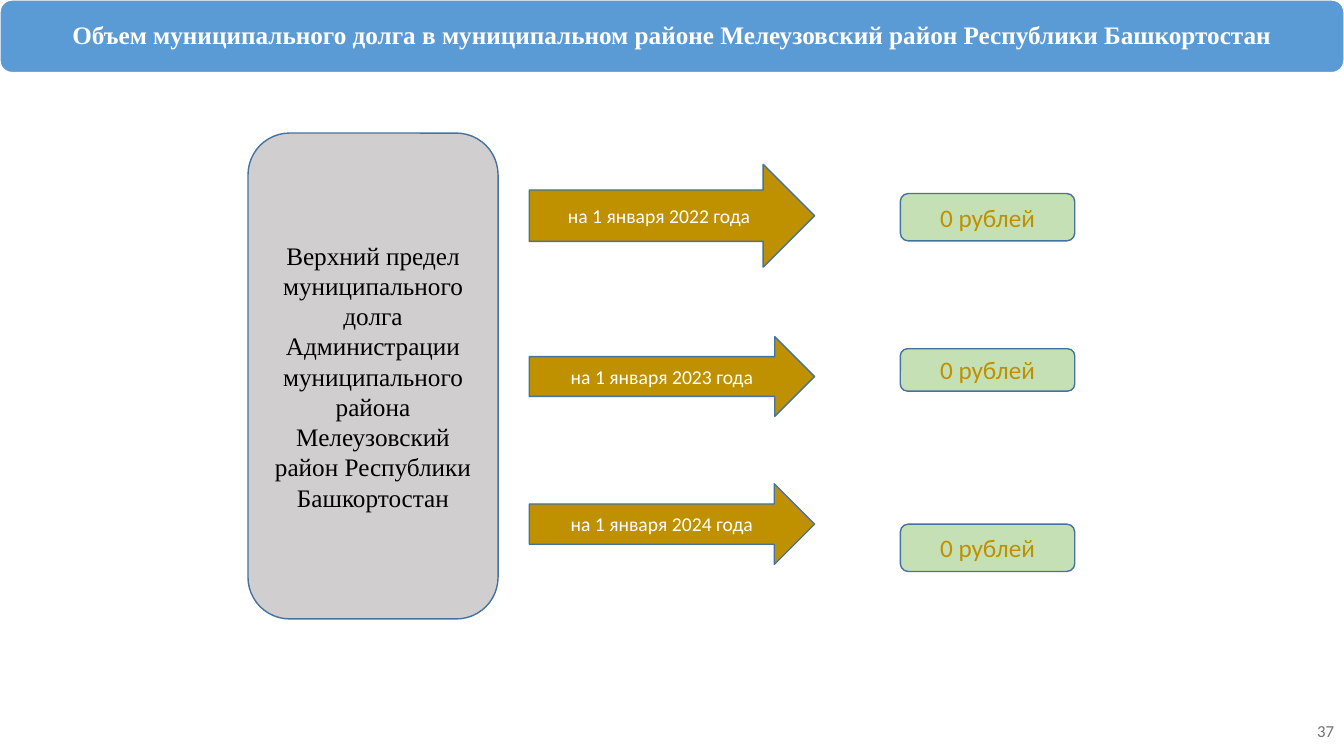
from dataclasses import dataclass

from pptx import Presentation
from pptx.dml.color import RGBColor
from pptx.enum.shapes import MSO_SHAPE as SHAPE
from pptx.enum.text import MSO_ANCHOR as ANCHOR, PP_ALIGN as ALIGN
from pptx.util import Inches, Pt


@dataclass(frozen=True)
class Theme:
    blue: str = "5B9BD5"
    outline: str = "43739E"
    gold: str = "BF9000"
    green: str = "C5E0B4"
    gray: str = "D0CECE"
    muted: str = "767171"
    white: str = "FFFFFF"
    black: str = "000000"
    serif: str = "Times New Roman"
    sans: str = "Calibri"
    large: int = 18
    medium: int = 14
    small: int = 12


THEME = Theme()


def write(sp, text, font=THEME.sans, size=THEME.large, color=THEME.black,
          bold=False, align=ALIGN.CENTER, anchor=ANCHOR.MIDDLE, spacing=None):
    tf = sp.text_frame
    tf.word_wrap = True
    tf.vertical_anchor = anchor
    p = tf.paragraphs[0]
    p.alignment = align
    p.line_spacing = spacing
    r = p.add_run()
    r.text = text
    r.font.name = font
    r.font.size = Pt(size)
    r.font.bold = bold
    r.font.color.rgb = RGBColor.from_string(color)


def add_block(s, kind, left, top, width, height, fill, line=THEME.outline):
    sp = s.shapes.add_shape(kind, Inches(left), Inches(top), Inches(width), Inches(height))
    sp.shadow.inherit = False
    sp.fill.solid()
    sp.fill.fore_color.rgb = RGBColor.from_string(fill)
    sp.line.color.rgb = RGBColor.from_string(line)
    sp.line.width = Pt(1)
    return sp


def add_title(s, text):
    bar = add_block(s, SHAPE.ROUNDED_RECTANGLE, 0, 0, 13.33, 0.72, THEME.blue, THEME.white)
    write(bar, text, font=THEME.serif, color=THEME.white, bold=True, spacing=0.9)


def add_limit(s, text):
    panel = add_block(s, SHAPE.ROUNDED_RECTANGLE, 2.46, 1.32, 2.48, 4.82, THEME.gray)
    write(panel, text, font=THEME.serif)


def add_date_arrow(s, year, top, height):
    arrow = add_block(s, SHAPE.RIGHT_ARROW, 5.25, top, 2.83, height, THEME.gold)
    write(arrow, f"на 1 января {year} года", size=THEME.medium, color=THEME.white)


def add_amount(s, text, top, height):
    box = add_block(s, SHAPE.ROUNDED_RECTANGLE, 8.93, top, 1.73, height, THEME.green)
    write(box, text, color=THEME.gold)


def add_page_number(s, number):
    box = s.shapes.add_textbox(Inches(10.33), Inches(7.1), Inches(3), Inches(0.4))
    write(box, number, size=THEME.small, color=THEME.muted,
          align=ALIGN.RIGHT, anchor=ANCHOR.TOP)


def main():
    prs = Presentation()
    prs.slide_width, prs.slide_height = Inches(13.33), Inches(7.5)
    s = prs.slides.add_slide(prs.slide_layouts[6])

    add_page_number(s, "37")
    add_limit(s, "Верхний предел муниципального долга Администрации "
                 "муниципального района Мелеузовский район Республики Башкортостан")
    rows = [
        (2022, 1.63, 1.02, 1.92, 0.47),
        (2023, 3.34, 0.79, 3.46, 0.42),
        (2024, 4.8, 0.8, 5.2, 0.47),
    ]
    for year, arrow_top, arrow_height, amount_top, amount_height in rows:
        add_date_arrow(s, year, arrow_top, arrow_height)
        add_amount(s, "0 рублей", amount_top, amount_height)
    add_title(s, "Объем муниципального долга в муниципальном районе "
                 "Мелеузовский район Республики Башкортостан")
    prs.save("out.pptx")


if __name__ == "__main__":
    main()
